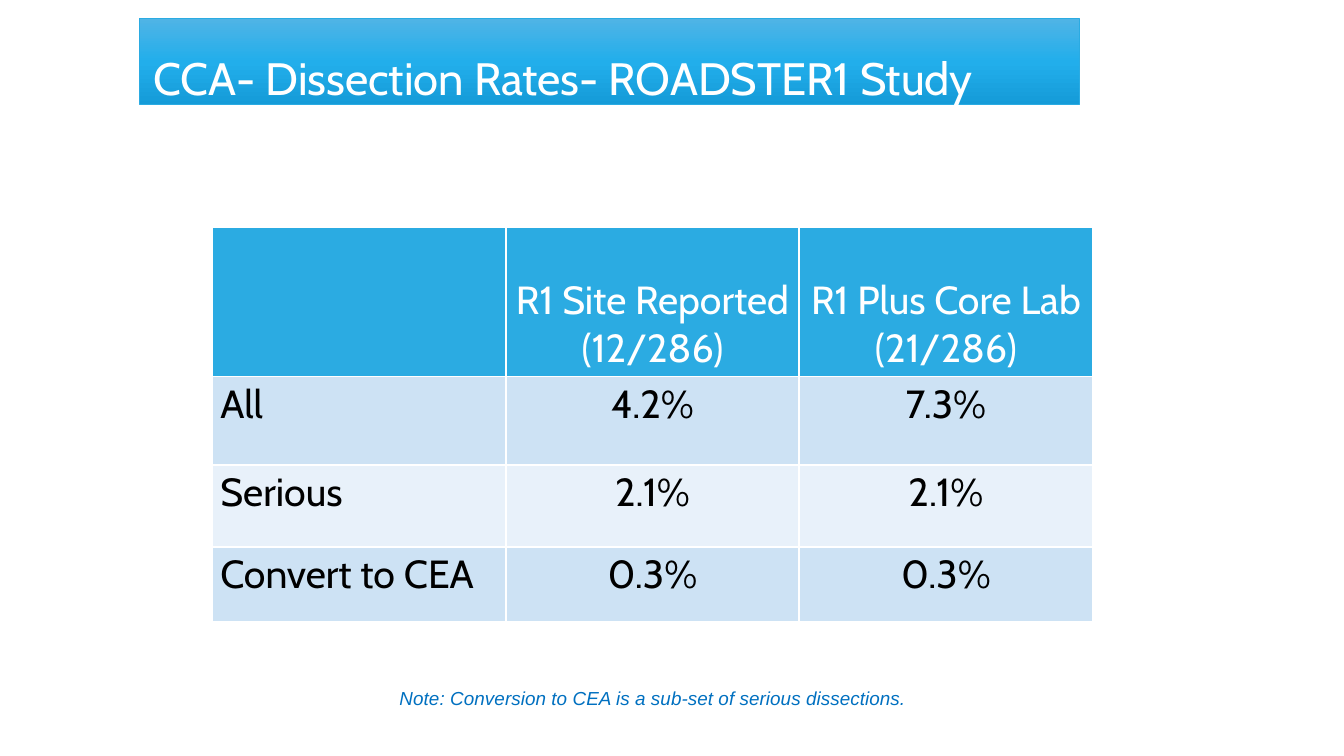
from copy import deepcopy

from lxml.etree import SubElement
from pptx import Presentation
from pptx.dml.color import RGBColor
from pptx.enum.text import MSO_ANCHOR as ANCHOR, MSO_AUTO_SIZE as AUTO, PP_ALIGN as ALIGN
from pptx.oxml.ns import qn
from pptx.util import Inches, Pt

# Content
TITLE = "CCA- Dissection Rates- ROADSTER1 Study"
ROWS = [
    ["", "R1 Site Reported\n(12/286)", "R1 Plus Core Lab\n(21/286)"],
    ["All", "4.2%", "7.3%"],
    ["Serious", "2.1%", "2.1%"],
    ["Convert to CEA", "0.3%", "0.3%"],
]
NOTE = "Note: Conversion to CEA is a sub-set of serious dissections."

# Layout and colours
SLIDE_WIDTH = 10
ROW_HEIGHTS = [1.11, 0.66, 0.61, 0.56]
TABLE_LEFT, TABLE_TOP, TABLE_WIDTH = 1.58, 1.69, 6.55
BLUE, WHITE, BLACK, NOTE_BLUE = "2BABE2", "FFFFFF", "000000", "0070C0"
BANDS = ["CDE2F4", "E8F1FA"]
TITLE_GRADIENT = [(0, "4FB4E6"), (0.5, "22AEEB"), (1, "159BD8")]


def rgb(value):
    return RGBColor.from_string(value)


def write(tf, text, size, color, font="Cabin", align=ALIGN.LEFT, italic=False):
    for i, line in enumerate(text.split("\n")):
        p = tf.paragraphs[0] if i == 0 else tf.add_paragraph()
        p.alignment = align
        r = p.add_run()
        r.text = line
        r.font.size, r.font.name, r.font.italic = Pt(size), font, italic
        r.font.color.rgb = rgb(color)


def set_borders(cell, width=1):
    """Give the cell white borders; they must precede its fill."""
    tc_pr = cell._tc.get_or_add_tcPr()
    for i, side in enumerate("LRTB"):
        ln = SubElement(tc_pr, qn(f"a:ln{side}"), w=str(Pt(width)))
        SubElement(SubElement(ln, qn("a:solidFill")), qn("a:srgbClr"), val=WHITE)
        tc_pr.insert(i, ln)


def fill_gradient(fill, stops, angle):
    fill.gradient()
    fill.gradient_angle = angle
    gs_list = fill._xPr.find(".//" + qn("a:gsLst"))
    gs_list.insert(1, deepcopy(gs_list[0]))
    for stop, (position, color) in zip(fill.gradient_stops, stops):
        stop.position = position
        stop.color.rgb = rgb(color)


prs = Presentation()
# Widescreen, 16:9
prs.slide_width, prs.slide_height = Inches(SLIDE_WIDTH), Inches(SLIDE_WIDTH * 9 / 16)
s = prs.slides.add_slide(prs.slide_layouts[5])

# Title bar
title = s.shapes.title
title.left, title.top = Inches(1.04), Inches(0.14)
title.width, title.height = Inches(6.99), Inches(0.64)
fill_gradient(title.fill, TITLE_GRADIENT, 270)
title.line.color.rgb, title.line.width = rgb(BLUE), Pt(0.5)
tf = title.text_frame
tf.auto_size, tf.word_wrap, tf.vertical_anchor = AUTO.NONE, True, ANCHOR.BOTTOM
tf.margin_left = Inches(0.1)
tf.margin_top = tf.margin_right = tf.margin_bottom = 0
write(tf, TITLE, 24.3, WHITE)

# Rates table
table = s.shapes.add_table(
    len(ROWS), len(ROWS[0]), Inches(TABLE_LEFT), Inches(TABLE_TOP),
    Inches(TABLE_WIDTH), Inches(sum(ROW_HEIGHTS))).table
for col in table.columns:
    col.width = Inches(TABLE_WIDTH / len(ROWS[0]))
for i, row in enumerate(ROWS):
    header = i == 0
    table.rows[i].height = Inches(ROW_HEIGHTS[i])
    for j, text in enumerate(row):
        cell = table.cell(i, j)
        cell.margin_left = cell.margin_right = Inches(0.06)
        cell.margin_top = cell.margin_bottom = Inches(0.03)
        cell.vertical_anchor = ANCHOR.BOTTOM if header else ANCHOR.TOP
        cell.fill.solid()
        cell.fill.fore_color.rgb = rgb(BLUE if header else BANDS[(i - 1) % 2])
        set_borders(cell)
        if text:
            write(cell.text_frame, text, 21, WHITE if header else BLACK,
                  align=ALIGN.CENTER if j else ALIGN.LEFT)

# Note
note = s.shapes.add_textbox(Inches(1.58), Inches(5.06), Inches(6.56), Inches(0.27))
tf = note.text_frame
tf.word_wrap, tf.auto_size = True, AUTO.SHAPE_TO_FIT_TEXT
write(tf, NOTE, 10.13, NOTE_BLUE, font="Arial", align=ALIGN.CENTER, italic=True)

prs.save("out.pptx")
